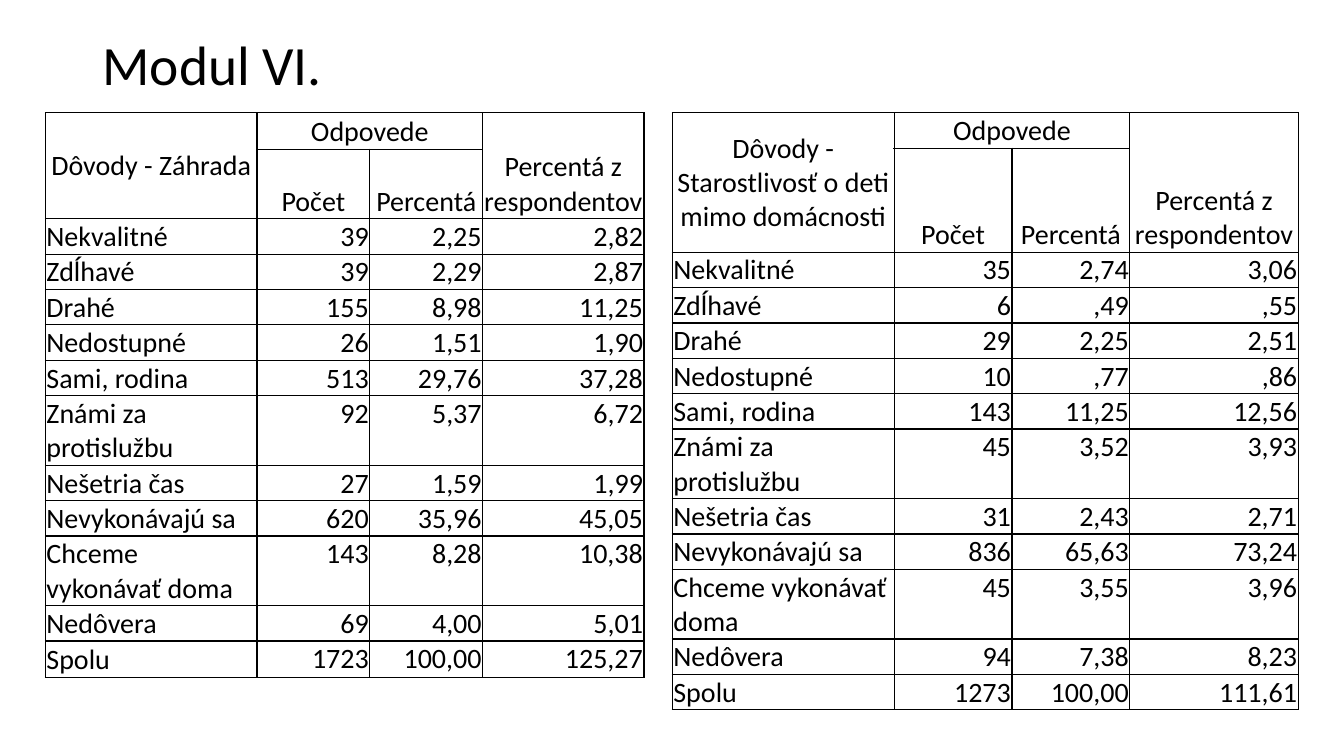
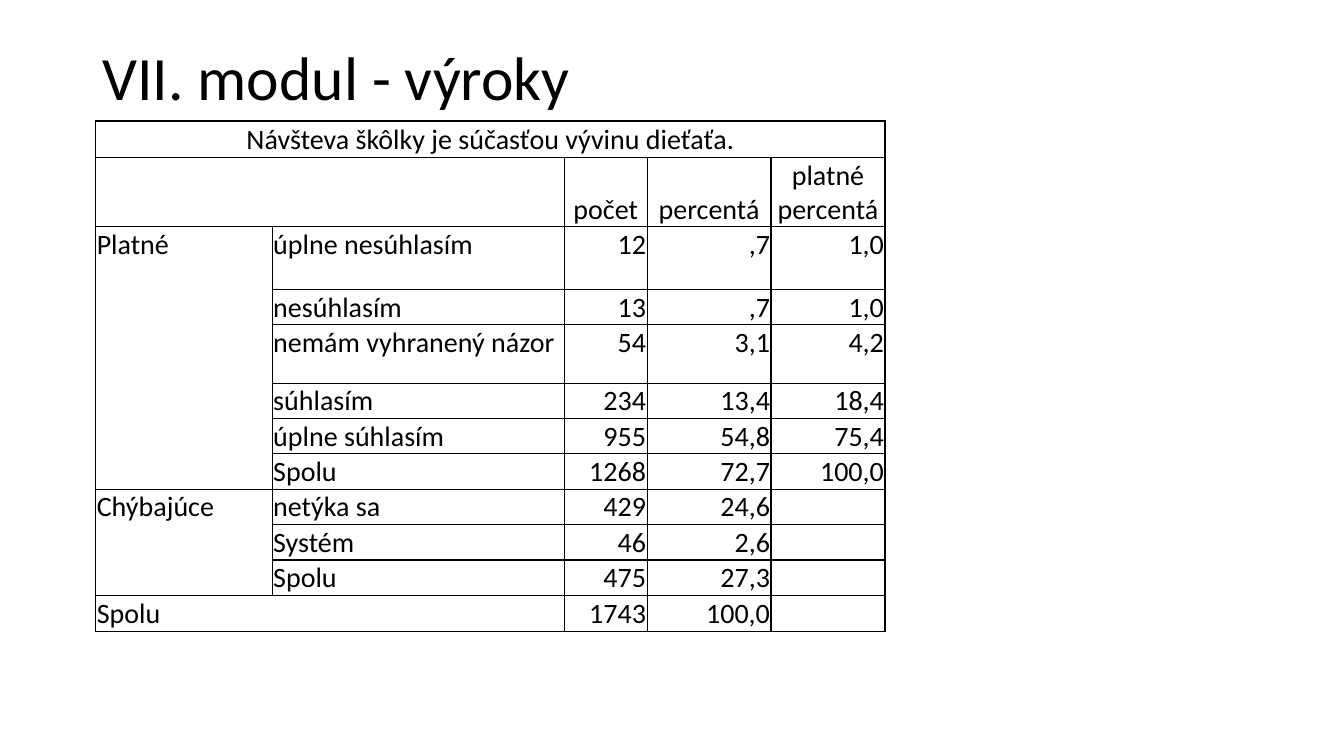
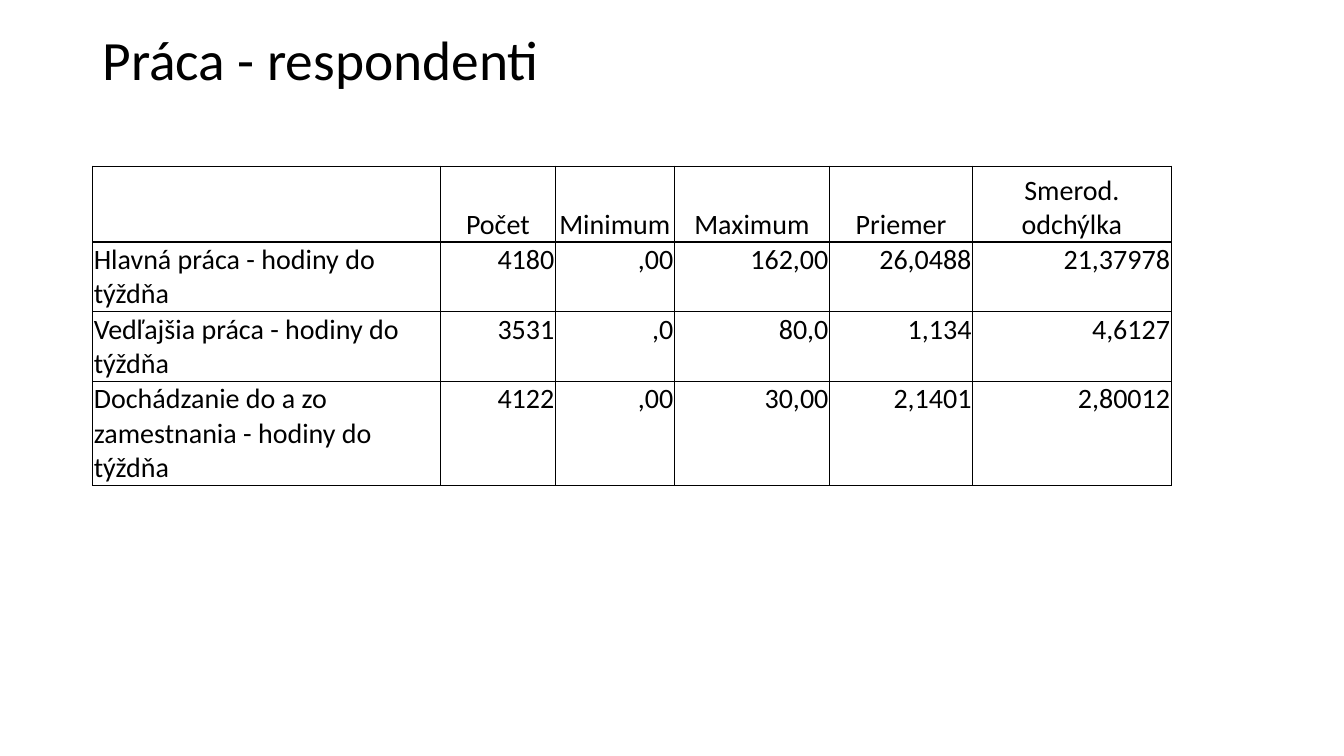
from dataclasses import dataclass

from lxml import etree
from pptx import Presentation
from pptx.dml.color import RGBColor
from pptx.enum import text
from pptx.oxml import ns
from pptx.util import Pt


@dataclass(frozen=True)
class Theme:
    font: str = "Calibri"
    ink: RGBColor = RGBColor(0, 0, 0)
    title_size: float = 44
    small_title_size: float = 39.6
    table_size: float = 20
    border: float = 1
    cell_inset: float = 0.75


@dataclass(frozen=True)
class Span:
    row: int
    column: int
    rows: int = 1
    columns: int = 1


@dataclass(frozen=True)
class TableSpec:
    """A grid in points; header rows are centred, label columns left, figures right."""
    left: float
    top: float
    widths: tuple[float, ...]
    heights: tuple[float, ...]
    cells: tuple[tuple[str, ...], ...]
    header_rows: int = 1
    label_columns: int = 1
    spans: tuple[Span, ...] = ()
    middle: tuple[tuple[int, int], ...] = ()


@dataclass(frozen=True)
class SlideSpec:
    title: str
    title_height: float
    title_size: float
    tables: tuple[TableSpec, ...]


THEME = Theme()
SLIDE_SIZE = (960, 540)
TITLE_LEFT, TITLE_TOP, TITLE_WIDTH = 66, 28.8, 828
TITLE_ONLY = 5
LINE = 24.48

REASONS = (
    "Nekvalitné", "Zdĺhavé", "Drahé", "Nedostupné", "Sami, rodina",
    "Známi za protislužbu", "Nešetria čas", "Nevykonávajú sa",
    "Chceme vykonávať doma", "Nedôvera", "Spolu",
)
REASON_SPANS = (Span(0, 0, rows=2), Span(0, 1, columns=2), Span(0, 3, rows=2))


def reasons_table(left: float, widths: tuple[float, ...], heights: tuple[float, ...],
                  subject: str, figures: tuple[tuple[str, ...], ...]) -> TableSpec:
    header = (
        (f"Dôvody - {subject}", "Odpovede", "", "Percentá z respondentov"),
        ("", "Počet", "Percentá", ""),
    )
    body = tuple((reason, *values) for reason, values in zip(REASONS, figures))
    total_row = len(header) + len(body) - 1
    return TableSpec(left, 80.64, widths, heights, header + body, header_rows=2,
                     spans=REASON_SPANS, middle=((0, 0), (total_row, 0)))


GARDEN = reasons_table(
    32.4, (151.2, 80.64, 80.64, 115.2),
    (25.92, 25.92, *[LINE] * 8, 38.16, LINE, 25.92),
    "Záhrada",
    (
        ("39", "2,25", "2,82"),
        ("39", "2,29", "2,87"),
        ("155", "8,98", "11,25"),
        ("26", "1,51", "1,90"),
        ("513", "29,76", "37,28"),
        ("92", "5,37", "6,72"),
        ("27", "1,59", "1,99"),
        ("620", "35,96", "45,05"),
        ("143", "8,28", "10,38"),
        ("69", "4,00", "5,01"),
        ("1723", "100,00", "125,27"),
    ),
)

CHILDCARE = reasons_table(
    480.24, (158.4, 84.24, 84.24, 120.24),
    (23.76, 33.84, *[LINE] * 8, 33.12, LINE, LINE),
    "Starostlivosť o deti mimo domácnosti",
    (
        ("35", "2,74", "3,06"),
        ("6", ",49", ",55"),
        ("29", "2,25", "2,51"),
        ("10", ",77", ",86"),
        ("143", "11,25", "12,56"),
        ("45", "3,52", "3,93"),
        ("31", "2,43", "2,71"),
        ("836", "65,63", "73,24"),
        ("45", "3,55", "3,96"),
        ("94", "7,38", "8,23"),
        ("1273", "100,00", "111,61"),
    ),
)

NURSERY = TableSpec(
    68.4, 86.4, (126, 208.8, 59.04, 88.56, 81.36),
    (25.92, 41.76, 44.64, 23.04, 41.76, *[LINE] * 6, 25.92),
    (
        ("Návšteva škôlky je súčasťou vývinu dieťaťa.", "", "", "", ""),
        ("", "", "počet", "percentá", "platné percentá"),
        ("Platné", "úplne nesúhlasím", "12", ",7", "1,0"),
        ("", "nesúhlasím", "13", ",7", "1,0"),
        ("", "nemám vyhranený názor", "54", "3,1", "4,2"),
        ("", "súhlasím", "234", "13,4", "18,4"),
        ("", "úplne súhlasím", "955", "54,8", "75,4"),
        ("", "Spolu", "1268", "72,7", "100,0"),
        ("Chýbajúce", "netýka sa", "429", "24,6", ""),
        ("", "Systém", "46", "2,6", ""),
        ("", "Spolu", "475", "27,3", ""),
        ("Spolu", "", "1743", "100,0", ""),
    ),
    header_rows=2,
    label_columns=2,
    spans=(Span(0, 0, columns=5), Span(1, 0, columns=2), Span(2, 0, rows=6),
           Span(8, 0, rows=3), Span(11, 0, columns=2)),
    middle=((0, 0),),
)

WORK = TableSpec(
    66.24, 118.8, (248.4, 82.08, 84.96, 110.88, 102.24, 141.84),
    (54, 33.12, 35.28, 61.92),
    (
        ("", "Počet", "Minimum", "Maximum", "Priemer", "Smerod. odchýlka"),
        ("Hlavná práca - hodiny do týždňa", "4180", ",00", "162,00", "26,0488", "21,37978"),
        ("Vedľajšia práca - hodiny do týždňa", "3531", ",0", "80,0", "1,134", "4,6127"),
        ("Dochádzanie do a zo zamestnania - hodiny do týždňa",
         "4122", ",00", "30,00", "2,1401", "2,80012"),
    ),
)

SLIDES = (
    SlideSpec("Modul VI.", 38.88, THEME.small_title_size, (GARDEN, CHILDCARE)),
    SlideSpec("VII. modul - výroky", 57.6, THEME.title_size, (NURSERY,)),
    SlideSpec("Práca - respondenti", 32.4, THEME.small_title_size, (WORK,)),
)


def format_paragraph(paragraph, size: float, alignment) -> None:
    paragraph.alignment = alignment
    paragraph.font.name = THEME.font
    paragraph.font.size = Pt(size)
    paragraph.font.color.rgb = THEME.ink


def set_title(slide, spec: SlideSpec) -> None:
    title = slide.shapes.title
    title.left, title.top = Pt(TITLE_LEFT), Pt(TITLE_TOP)
    title.width, title.height = Pt(TITLE_WIDTH), Pt(spec.title_height)
    frame = title.text_frame
    frame.text = spec.title
    frame.word_wrap = True
    frame.auto_size = text.MSO_AUTO_SIZE.NONE
    frame.vertical_anchor = text.MSO_ANCHOR.MIDDLE
    paragraph = frame.paragraphs[0]
    paragraph.line_spacing = 0.9
    format_paragraph(paragraph, spec.title_size, text.PP_ALIGN.LEFT)


def add_borders(cell) -> None:
    properties = cell._tc.get_or_add_tcPr()
    for side in ("a:lnL", "a:lnR", "a:lnT", "a:lnB"):
        line = etree.SubElement(properties, ns.qn(side), w=str(Pt(THEME.border)))
        fill = etree.SubElement(line, ns.qn("a:solidFill"))
        etree.SubElement(fill, ns.qn("a:srgbClr"), val=str(THEME.ink))


def format_cell(cell, spec: TableSpec, row: int, column: int) -> None:
    if row < spec.header_rows:
        alignment, anchor = text.PP_ALIGN.CENTER, text.MSO_ANCHOR.BOTTOM
    elif column < spec.label_columns:
        alignment, anchor = text.PP_ALIGN.LEFT, text.MSO_ANCHOR.TOP
    else:
        alignment, anchor = text.PP_ALIGN.RIGHT, text.MSO_ANCHOR.TOP
    if (row, column) in spec.middle:
        anchor = text.MSO_ANCHOR.MIDDLE
    cell.text = spec.cells[row][column]
    cell.vertical_anchor = anchor
    cell.margin_left = cell.margin_right = cell.margin_top = Pt(THEME.cell_inset)
    cell.margin_bottom = 0
    add_borders(cell)
    cell.fill.background()
    format_paragraph(cell.text_frame.paragraphs[0], THEME.table_size, alignment)


def add_table(slide, spec: TableSpec) -> None:
    table = slide.shapes.add_table(
        len(spec.heights), len(spec.widths), Pt(spec.left), Pt(spec.top),
        Pt(sum(spec.widths)), Pt(sum(spec.heights)),
    ).table
    table.first_row = table.horz_banding = False
    for column, width in zip(table.columns, spec.widths):
        column.width = Pt(width)
    for row, height in zip(table.rows, spec.heights):
        row.height = Pt(height)
    for row in range(len(spec.heights)):
        for column in range(len(spec.widths)):
            format_cell(table.cell(row, column), spec, row, column)
    for span in spec.spans:
        last = table.cell(span.row + span.rows - 1, span.column + span.columns - 1)
        table.cell(span.row, span.column).merge(last)


def main() -> None:
    presentation = Presentation()
    presentation.slide_width, presentation.slide_height = map(Pt, SLIDE_SIZE)
    for spec in SLIDES:
        slide = presentation.slides.add_slide(presentation.slide_layouts[TITLE_ONLY])
        set_title(slide, spec)
        for table in spec.tables:
            add_table(slide, table)
    presentation.save("out.pptx")


if __name__ == "__main__":
    main()
